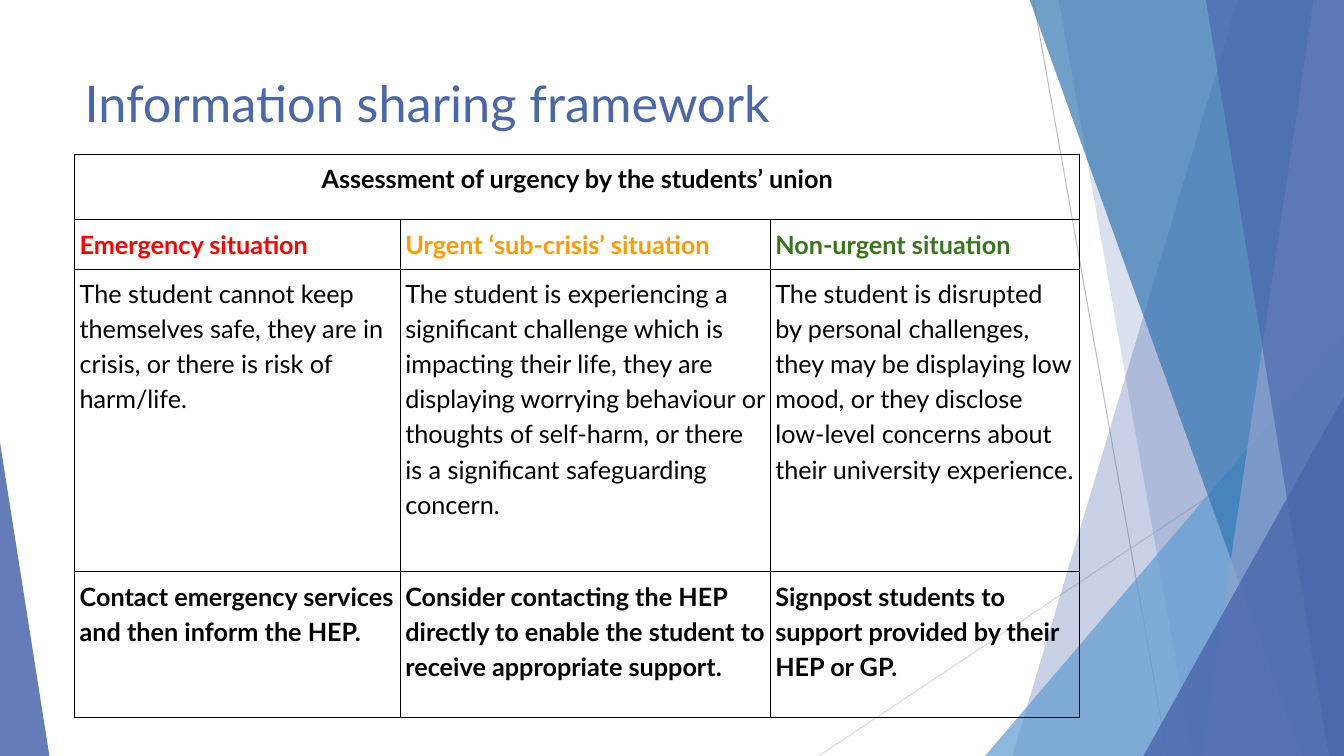
from lxml.etree import SubElement
from pptx import Presentation
from pptx.dml.color import RGBColor
from pptx.enum.shapes import MSO_CONNECTOR, MSO_SHAPE
from pptx.enum.text import MSO_ANCHOR, PP_ALIGN
from pptx.oxml.ns import qn
from pptx.util import Inches, Pt

BLACK = RGBColor(0x00, 0x00, 0x00)
INDIGO = RGBColor(0x4A, 0x66, 0xAC)
LAVENDER = RGBColor(0x90, 0xA2, 0xCF)
SKY = RGBColor(0x62, 0x9D, 0xD1)
BLUE = RGBColor(0x34, 0x77, 0xB2)
GREY = RGBColor(0xBF, 0xBF, 0xBF)
LIGHT_GREY = RGBColor(0xD9, 0xD9, 0xD9)
RED = RGBColor(0xFF, 0x00, 0x00)
ORANGE = RGBColor(0xFF, 0x99, 0x00)
GREEN = RGBColor(0x38, 0x76, 0x1D)

RIGHT, TOP, BOTTOM = 13.33, -0.01, 7.5

BANDS = [
    (12.28, 10.04, INDIGO, 30),
    (10.5, 11.83, INDIGO, 20),
    (10.21, 12.91, BLUE, 70),
    (13.03, 11.92, LAVENDER, 70),
    (11.96, 13.18, INDIGO, 65),
]

HEADING = "Assessment of urgency by the students’ union"
SITUATIONS = [
    ("Emergency situation", RED,
     "The student cannot keep themselves safe, they are in crisis, or there is risk of harm/life.",
     "Contact emergency services and then inform the HEP."),
    ("Urgent ‘sub-crisis’ situation", ORANGE,
     "The student is experiencing a significant challenge which is impacting their life, they are "
     "displaying worrying behaviour or thoughts of self-harm, or there is a significant "
     "safeguarding concern.",
     "Consider contacting the HEP directly to enable the student to receive appropriate support."),
    ("Non-urgent situation", GREEN,
     "The student is disrupted by personal challenges, they may be displaying low mood, or they "
     "disclose low-level concerns about their university experience.",
     "Signpost students to support provided by their HEP or GP."),
]


def write(tf, text, size=18, color=BLACK, bold=False, align=PP_ALIGN.LEFT, spacing=1.16, after=8):
    p = tf.paragraphs[0]
    p.alignment = align
    p.line_spacing = spacing
    p.space_after = Pt(after)
    r = p.add_run()
    r.text = text
    r.font.name = "Lato"
    r.font.size = Pt(size)
    r.font.bold = bold
    r.font.color.rgb = color


class SlideBuilder:
    def __init__(self, prs):
        self.s = prs.slides.add_slide(prs.slide_layouts[5])

    def title(self, text, x, y, w, h):
        sp = self.s.shapes.title
        sp.left, sp.top, sp.width, sp.height = map(Inches, (x, y, w, h))
        tf = sp.text_frame
        tf.word_wrap = True
        tf.vertical_anchor = MSO_ANCHOR.TOP
        write(tf, text, size=36, color=INDIGO, spacing=1, after=0)

    def line(self, start, end, color):
        cx = self.s.shapes.add_connector(MSO_CONNECTOR.STRAIGHT, *map(Inches, start + end))
        cx.line.color.rgb = color
        cx.line.width = Pt(0.75)
        SubElement(cx._element.spPr, qn("a:effectLst"))

    def paint(self, sp, color, opacity):
        sp.shadow.inherit = False
        sp.line.fill.background()
        sp.fill.solid()
        sp.fill.fore_color.rgb = color
        srgb = sp._element.spPr.find(qn("a:solidFill")).find(qn("a:srgbClr"))
        SubElement(srgb, qn("a:alpha")).set("val", str(opacity * 1000))

    def band(self, top_x, bottom_x, color, opacity):
        fb = self.s.shapes.build_freeform(Inches(top_x), Inches(TOP))
        corners = [(RIGHT, TOP), (RIGHT, BOTTOM), (bottom_x, BOTTOM)]
        fb.add_line_segments([(Inches(x), Inches(y)) for x, y in corners])
        self.paint(fb.convert_to_shape(), color, opacity)

    def triangle(self, x, y, w, h, apex, color, opacity):
        sp = self.s.shapes.add_shape(MSO_SHAPE.ISOSCELES_TRIANGLE, *map(Inches, (x, y, w, h)))
        sp.adjustments[0] = apex
        self.paint(sp, color, opacity)

    def table(self, x, y, widths, heights):
        frame = self.s.shapes.add_table(len(heights), len(widths), Inches(x), Inches(y),
                                        Inches(sum(widths)), Inches(sum(heights)))
        table = frame.table
        for column, width in zip(table.columns, widths):
            column.width = Inches(width)
        for row, height in zip(table.rows, heights):
            row.height = Inches(height)
        for cell in table.iter_cells():
            self.border(cell)
        return table

    def border(self, cell):
        cell.margin_left = cell.margin_right = Inches(0.05)
        cell.margin_top = cell.margin_bottom = Inches(0.05)
        tcPr = cell._tc.get_or_add_tcPr()
        for side in ("a:lnL", "a:lnR", "a:lnT", "a:lnB"):
            ln = SubElement(tcPr, qn(side), w=str(Pt(1)))
            fill = SubElement(ln, qn("a:solidFill"))
            SubElement(fill, qn("a:srgbClr"), val=str(BLACK))
        cell.fill.background()


def main():
    prs = Presentation()
    prs.slide_width, prs.slide_height = Inches(RIGHT), Inches(BOTTOM)
    slide = SlideBuilder(prs)

    slide.line((10.25, 0), (11.58, BOTTOM), GREY)
    slide.line((RIGHT, 4.03), (8.12, BOTTOM), LIGHT_GREY)
    for band in BANDS[:2]:
        slide.band(*band)
    slide.triangle(9.77, 3.33, 3.56, 4.17, 1, SKY, 72)
    for band in BANDS[2:]:
        slide.band(*band)
    slide.triangle(11.34, 3.93, 1.99, 3.57, 1, INDIGO, 80)
    slide.triangle(0, 4.39, 0.49, 3.11, 0, INDIGO, 85)

    slide.title("Information sharing framework", 0.74, 0.67, 9.4, 1.44)
    table = slide.table(0.74, 1.53, [3.23, 3.67, 3.07], [0.65, 0.49, 3, 1.45])
    table.cell(0, 0).merge(table.cell(0, 2))
    write(table.cell(0, 0).text_frame, HEADING, bold=True, align=PP_ALIGN.CENTER)
    for col, (name, color, meaning, action) in enumerate(SITUATIONS):
        write(table.cell(1, col).text_frame, name, color=color, bold=True)
        write(table.cell(2, col).text_frame, meaning)
        write(table.cell(3, col).text_frame, action, bold=True)

    prs.save("out.pptx")


if __name__ == "__main__":
    main()
